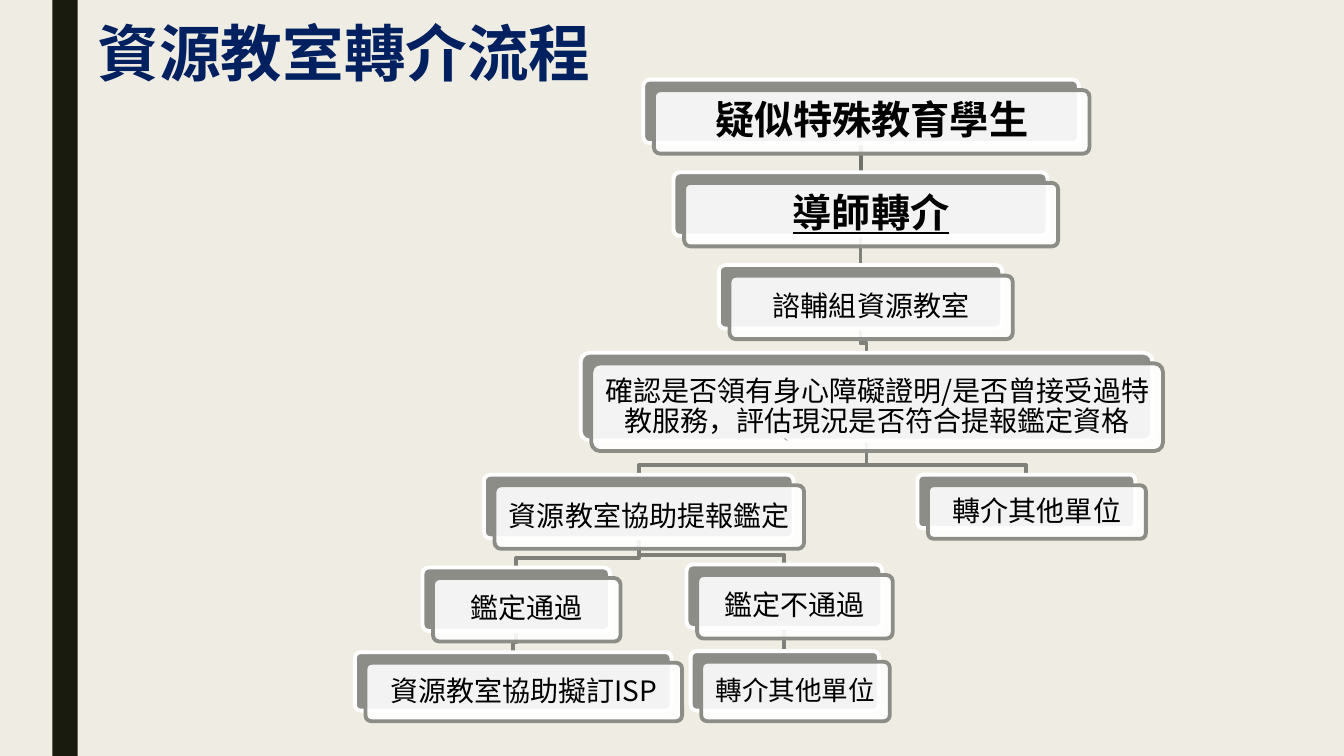
from lxml import etree
from pptx import Presentation
from pptx.dml.color import RGBColor
from pptx.enum.shapes import MSO_CONNECTOR, MSO_SHAPE
from pptx.enum.text import MSO_ANCHOR, PP_ALIGN
from pptx.oxml.ns import qn
from pptx.util import Inches, Pt

RECT, ROUND = MSO_SHAPE.RECTANGLE, MSO_SHAPE.ROUNDED_RECTANGLE
STRAIGHT = MSO_CONNECTOR.STRAIGHT
MIDDLE = MSO_ANCHOR.MIDDLE
LEFT, CENTER = PP_ALIGN.LEFT, PP_ALIGN.CENTER

CELL = Inches(0.1)  # grid of 133.3 columns by 75 rows
COLS, ROWS = 133.3, 75
FONT = "Noto Sans CJK SC"
COLORS = {
    "paper": "EFEDE3", "bar": "191B0E", "title": "002060", "text": "000000",
    "card": "8C8D86", "white": "FFFFFF", "link": "7F807A", "top_link": "70716B",
}
CARD_SHIFT = 1.05   # offset of the front card from its backing
ELBOW_RISE = 0.95   # height of an elbow above the child card
CARD_ROW = 6.3
STEP = 9.2          # distance between the first three stages

# name: (left, top, width, height, text, format)
STAGES = {
    "student": (63.8, 7.9, 43.2, CARD_ROW, "疑似特殊教育學生",
                {"size": 28, "bold": True, "inset": 1.4}),
    "tutor": (66.8, 7.9 + STEP, 37.1, CARD_ROW, "導師轉介",
              {"size": 28, "bold": True, "underline": True, "inset": 1.4}),
    "office": (71.3, 7.9 + 2 * STEP, 28.1, CARD_ROW, "諮輔組資源教室", {}),
    "check": (57.6, 35, 56.7, 8.7,
              "確認是否領有身心障礙證明/是否曾接受過特教服務，評估現況是否符合提報鑑定資格", {}),
    "apply": (48, 47.1, 30.7, CARD_ROW, "資源教室協助提報鑑定", {}),
    "passed": (41.9, 56.3, 18.6, CARD_ROW, "鑑定通過", {}),
    "plan": (35.2, 64.7, 31.4, 5.8, "資源教室協助擬訂ISP", {}),
    "failed": (68.1, 56, 19.4, CARD_ROW, "鑑定不通過", {}),
    "refer_failed": (68.5, 64.6, 18.7, 5.9, "轉介其他單位", {"size": 19}),
    "refer": (91, 47.1, 21.6, 5.3, "轉介其他單位", {}),
}
LINKS = [
    ("check", "refer"), ("failed", "refer_failed"), ("apply", "failed"),
    ("passed", "plan"), ("apply", "passed"), ("check", "apply"),
    ("office", "check"), ("tutor", "office"), ("student", "tutor"),
]


def grid(*values):
    return [round(v * CELL) for v in values]


def rgb(name):
    return RGBColor.from_string(COLORS[name])


def set_line(sp, color, width=2.75):
    sp.line.color.rgb = rgb(color)
    sp.line.width = Pt(width)


def add_box(slide, kind, box, fill, line=None):
    sp = slide.shapes.add_shape(kind, *grid(*box))
    sp.shadow.inherit = False
    sp.fill.solid()
    sp.fill.fore_color.rgb = rgb(fill)
    if line:
        set_line(sp, line)
    else:
        sp.line.fill.background()
    return sp


def write(sp, text, size=20, color="text", bold=False, underline=False,
          align=CENTER, inset=1.0, wrap=True):
    tf = sp.text_frame
    tf.word_wrap = wrap
    tf.vertical_anchor = MIDDLE
    tf.margin_left = tf.margin_right = tf.margin_top = tf.margin_bottom = grid(inset)[0]
    p = tf.paragraphs[0]
    p.alignment = align
    p.line_spacing = 0.9
    r = p.add_run()
    r.text = text
    r.font.size = Pt(size)
    r.font.bold = bold
    r.font.underline = underline
    r.font.color.rgb = rgb(color)
    r.font.name = FONT
    ea = etree.SubElement(r.font._element, qn("a:ea"))
    ea.set("typeface", FONT)


def add_card(slide, left, top, width, height, text, style):
    """Draw a backing card and a translucent front card with the text."""
    front = (left + CARD_SHIFT, top + CARD_SHIFT, width, height)
    back_sp = add_box(slide, ROUND, (left, top, width, height), "card", "white")
    front_sp = add_box(slide, ROUND, front, "white", "card")
    for sp in (back_sp, front_sp):
        sp.adjustments[0] = 0.1
    color = front_sp._element.spPr.find(qn("a:solidFill"))[0]
    etree.SubElement(color, qn("a:alpha")).set("val", "90000")
    write(front_sp, text, **style)


def add_line(slide, start, end, color, width=2.75):
    line = slide.shapes.add_connector(STRAIGHT, *grid(*start, *end))
    set_line(line, color, width)
    etree.SubElement(line._element.spPr, qn("a:effectLst"))


def add_link(slide, parent, child):
    """Join the bottom of a parent card to the top of its child."""
    left, top, width, height = STAGES[parent][:4]
    x1, y1 = left + width / 2, top + height
    left, y2, width = STAGES[child][:3]
    x2 = left + width / 2
    if abs(x1 - x2) < 0.1:
        color = "top_link" if parent == "student" else "link"
        add_line(slide, (x1, y1), (x1, y2), color)
        return
    bend = y2 - ELBOW_RISE
    path = slide.shapes.build_freeform(*grid(x1, y1))
    points = [(x1, bend), (x2, bend), (x2, y2)]
    path.add_line_segments([grid(*pt) for pt in points], close=False)
    sp = path.convert_to_shape()
    sp.shadow.inherit = False
    sp.fill.background()
    set_line(sp, "link")


def main():
    prs = Presentation()
    prs.slide_width, prs.slide_height = grid(COLS, ROWS)
    slide = prs.slides.add_slide(prs.slide_layouts[6])
    slide.background.fill.solid()
    slide.background.fill.fore_color.rgb = rgb("paper")

    add_box(slide, RECT, (5.2, 0, 2.5, ROWS), "bar")
    for parent, child in LINKS:
        add_link(slide, parent, child)
    for stage in STAGES.values():
        add_card(slide, *stage)
    title = slide.shapes.add_textbox(*grid(8.7, 1.8, 51.4, 7.6))
    write(title, "資源教室轉介流程", size=44, color="title", bold=True,
          align=LEFT, wrap=False)
    add_line(slide, (78.1, 43.7), (77.8, 43.5), "card", 0.5)
    prs.save("out.pptx")


if __name__ == "__main__":
    main()
